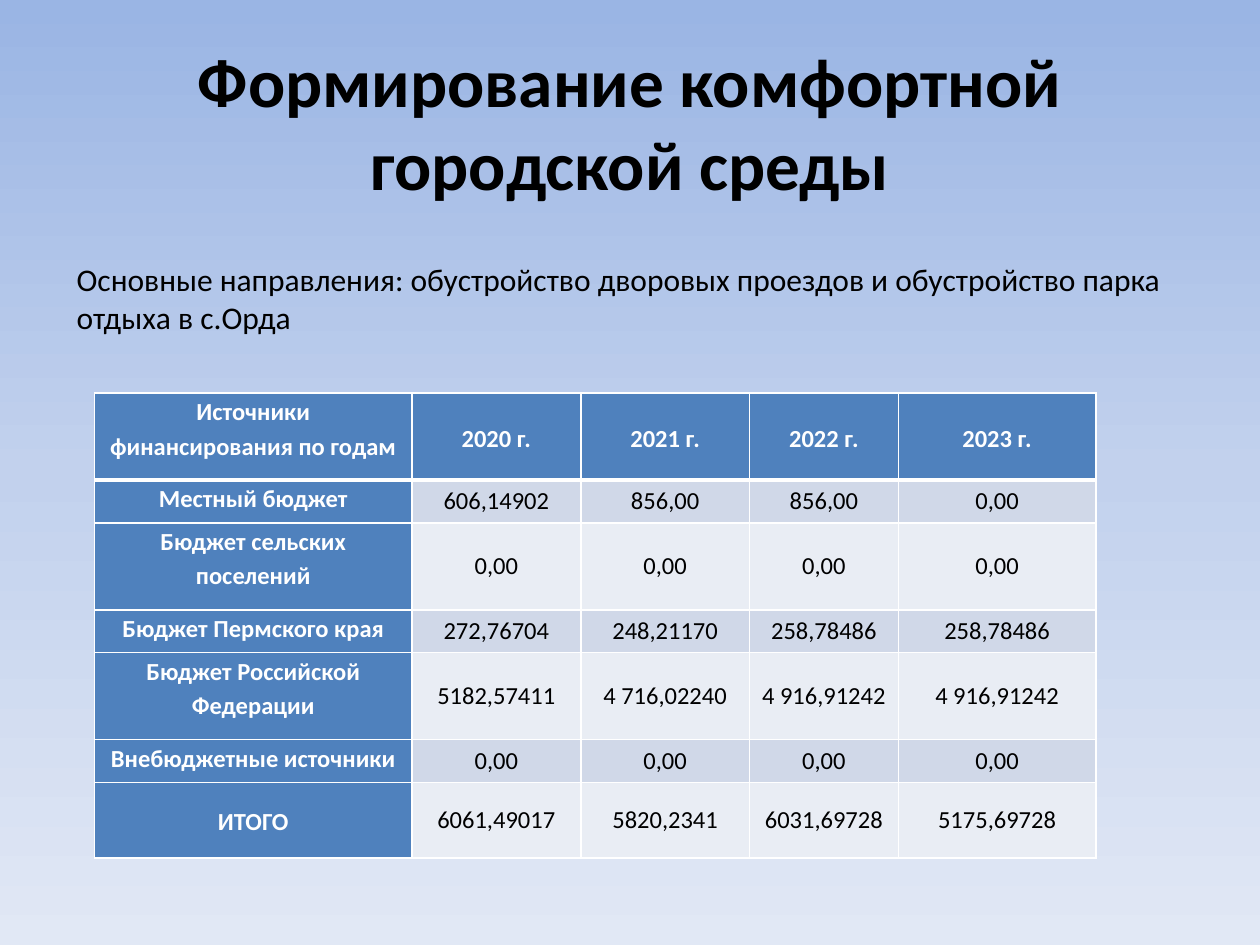
import copy
from dataclasses import dataclass

import lxml.etree
import pptx
import pptx.dml.color
import pptx.enum.text
import pptx.oxml.ns
import pptx.util

Inches = pptx.util.Inches
Pt = pptx.util.Pt


@dataclass(frozen=True)
class Theme:
    font: str = "Calibri"
    text: str = "000000"
    light: str = "FFFFFF"
    heading_fill: str = "4F81BD"
    bands: tuple[str, str] = ("D0D8E8", "E9EDF4")
    gradient: tuple[str, ...] = ("9AB5E4", "C2D1ED", "E1E8F5")
    title_size: float = 39.6
    body_size: float = 18
    table_size: float = 14
    border: float = 1
    header_rule: float = 3


@dataclass(frozen=True)
class Row:
    height: float
    cells: tuple[str, ...]


THEME = Theme()
COLUMNS = (2.52, 1.34, 1.34, 1.18, 1.57)
SHORT, TALL, TOTAL = 0.34, 0.69, 0.6
ROWS = (
    Row(TALL, ("Источники финансирования по годам", "2020 г.", "2021 г.", "2022 г.", "2023 г.")),
    Row(SHORT, ("Местный бюджет", "606,14902", "856,00", "856,00", "0,00")),
    Row(TALL, ("Бюджет сельских поселений", "0,00", "0,00", "0,00", "0,00")),
    Row(SHORT, ("Бюджет Пермского края", "272,76704", "248,21170", "258,78486", "258,78486")),
    Row(TALL, ("Бюджет Российской Федерации", "5182,57411", "4 716,02240", "4 916,91242", "4 916,91242")),
    Row(SHORT, ("Внебюджетные источники", "0,00", "0,00", "0,00", "0,00")),
    Row(TOTAL, ("ИТОГО", "6061,49017", "5820,2341", "6031,69728", "5175,69728")),
)


def rgb(color: str) -> pptx.dml.color.RGBColor:
    return pptx.dml.color.RGBColor.from_string(color)


def set_text(tf, text: str, size: float, color: str, bold: bool = False, centered: bool = True):
    tf.text = text
    p = tf.paragraphs[0]
    align = pptx.enum.text.PP_ALIGN
    p.alignment = align.CENTER if centered else align.LEFT
    font = p.runs[0].font
    font.name, font.size, font.bold = THEME.font, Pt(size), bold
    font.color.rgb = rgb(color)
    return p


def paint_background(s) -> None:
    fill = s.background.fill
    fill.gradient()
    fill.gradient_angle = 270
    stop_list = s.element.xpath(".//a:gsLst")[0]
    stop_list.insert(1, copy.deepcopy(stop_list[0]))
    last = len(THEME.gradient) - 1
    for i, (stop, color) in enumerate(zip(fill.gradient_stops, THEME.gradient)):
        stop.position = i / last
        stop.color.rgb = rgb(color)


def add_borders(cell, top: float, bottom: float) -> None:
    qn = pptx.oxml.ns.qn
    tc_pr = cell._tc.get_or_add_tcPr()
    widths = {"lnL": THEME.border, "lnR": THEME.border, "lnT": top, "lnB": bottom}
    for i, (side, width) in enumerate(widths.items()):
        line = lxml.etree.Element(qn(f"a:{side}"), w=str(Pt(width)))
        fill = lxml.etree.SubElement(line, qn("a:solidFill"))
        lxml.etree.SubElement(fill, qn("a:srgbClr"), val=THEME.light)
        tc_pr.insert(i, line)


def format_cell(cell, text: str, row: int, col: int) -> None:
    heading = row == 0 or col == 0
    top_label = col == 0 and row < len(ROWS) - 1
    anchor = pptx.enum.text.MSO_ANCHOR
    cell.vertical_anchor = anchor.TOP if top_label else anchor.MIDDLE
    cell.margin_left = cell.margin_right = Inches(0.07)
    cell.margin_top = cell.margin_bottom = 0
    p = set_text(cell.text_frame, text, THEME.table_size,
                 THEME.light if heading else THEME.text, bold=heading)
    if heading:
        p.line_spacing = 1.15
        p.space_before = Pt(24)
        p_pr = p._p.get_or_add_pPr()
        p_pr.set("marL", "0")
        p_pr.set("indent", str(Inches(-0.21)))
    cell.fill.solid()
    cell.fill.fore_color.rgb = rgb(THEME.heading_fill if heading else THEME.bands[(row - 1) % 2])
    add_borders(cell,
                top=THEME.header_rule if row == 1 else THEME.border,
                bottom=THEME.header_rule if row == 0 else THEME.border)


def add_budget_table(s) -> None:
    table = s.shapes.add_table(
        len(ROWS), len(COLUMNS), Inches(0.75), Inches(3.12),
        Inches(sum(COLUMNS)), Inches(sum(row.height for row in ROWS))).table
    for column, width in zip(table.columns, COLUMNS):
        column.width = Inches(width)
    for i, row in enumerate(ROWS):
        table.rows[i].height = Inches(row.height)
        for j, text in enumerate(row.cells):
            format_cell(table.cell(i, j), text, i, j)


def add_title(s) -> None:
    title = s.shapes.title
    title.left, title.top, title.width, title.height = map(Inches, (0.5, 0.3, 9, 1.32))
    title.text_frame.vertical_anchor = pptx.enum.text.MSO_ANCHOR.MIDDLE
    set_text(title.text_frame, "Формирование комфортной городской среды",
             THEME.title_size, THEME.text, bold=True)


def add_directions(s) -> None:
    tf = s.shapes.add_textbox(*map(Inches, (0.51, 2.01, 9.18, 0.71))).text_frame
    tf.word_wrap = True
    tf.vertical_anchor = pptx.enum.text.MSO_ANCHOR.MIDDLE
    set_text(tf, "Основные направления: обустройство дворовых проездов "
             "и обустройство парка отдыха в с.Орда",
             THEME.body_size, THEME.text, centered=False)


def main() -> None:
    prs = pptx.Presentation()
    prs.slide_width, prs.slide_height = Inches(10), Inches(7.5)
    s = prs.slides.add_slide(prs.slide_layouts[5])
    paint_background(s)
    add_title(s)
    add_budget_table(s)
    add_directions(s)
    prs.save("out.pptx")


if __name__ == "__main__":
    main()
